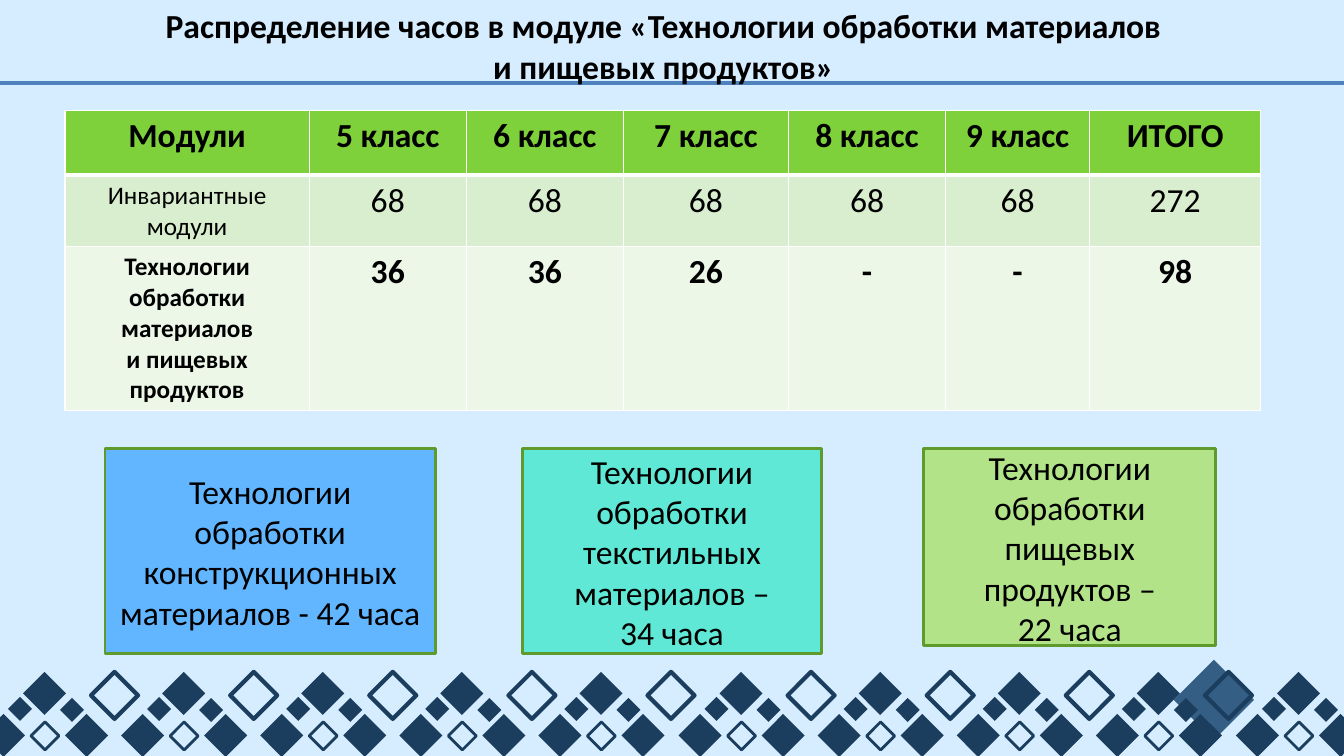
from lxml import etree
from pptx import Presentation
from pptx.dml.color import RGBColor
from pptx.enum.shapes import MSO_CONNECTOR, MSO_SHAPE
from pptx.enum.text import MSO_ANCHOR, MSO_AUTO_SIZE, PP_ALIGN
from pptx.oxml.ns import qn
from pptx.util import Pt

DIAMOND = MSO_SHAPE.DIAMOND
RECTANGLE = MSO_SHAPE.RECTANGLE
STRAIGHT = MSO_CONNECTOR.STRAIGHT
TOP, MIDDLE = MSO_ANCHOR.TOP, MSO_ANCHOR.MIDDLE
NO_AUTOFIT = MSO_AUTO_SIZE.NONE
CENTER = PP_ALIGN.CENTER

SCALE = 9080
FONT = "Calibri"
TITLE_ONLY = 5
SLIDE_WIDTH, SLIDE_HEIGHT = 1343, 755
COLORS = {
    "background": "D6ECFF",
    "text": "000000",
    "white": "FFFFFF",
    "rule": "4F81BD",
    "ornament": "1B3E5E",
    "accent": "345E84",
    "header": "7FD13B",
    "odd_row": "D8EECE",
    "even_row": "ECF7E8",
    "card_line": "5E9B2C",
    "blue": "61B6FF",
    "teal": "5FE8D6",
    "green": "B2E389",
}

TITLE = ["Распределение часов в модуле «Технологии обработки материалов",
         "и пищевых продуктов»"]
COLUMN_WIDTHS = [244, 157, 157, 165, 157, 144, 171]
ROW_HEIGHTS = [65, 71, 161]
ROW_FILLS = ["header", "odd_row", "even_row"]
ROWS = [
    ["Модули", "5 класс", "6 класс", "7 класс", "8 класс", "9 класс", "ИТОГО"],
    ["Инвариантные модули", "68", "68", "68", "68", "68", "272"],
    ["Технологии обработки материалов\nи пищевых продуктов",
     "36", "36", "26", "-", "-", "98"],
]
CARDS = [
    ((105, 448, 330, 205), "blue",
     ["Технологии обработки конструкционных материалов - 42 часа"]),
    ((522, 448, 299, 205), "teal",
     ["Технологии обработки текстильных материалов –", "34 часа"]),
    ((923, 448, 292, 197), "green",
     ["Технологии обработки пищевых продуктов –", "22 часа"]),
]
TILE_COUNT = 10
TILE_SPAN = 1253
SOLID_DIAMONDS = [(0, 54, 43), (41, 12, 43), (83, 54, 43),
                  (26, 37, 24), (78, 38, 24)]
SMALL_OUTLINE = (49, 62, 28)
LARGE_OUTLINE = (109, 12, 47)


def px(length):
    """Turn pixels into EMU."""
    return int(length * SCALE)


def color(name):
    """Return the named colour."""
    return RGBColor.from_string(COLORS[name])


def write(frame, lines, size=24, bold=False):
    """Write centred paragraphs into a text frame."""
    frame.text = "\n".join(lines)
    for paragraph in frame.paragraphs:
        paragraph.alignment = CENTER
        paragraph.font.name = FONT
        paragraph.font.size = Pt(size)
        paragraph.font.bold = bold
        paragraph.font.color.rgb = color("text")


def add_figure(slide, kind, box, fill=None, line=None, weight=2):
    """Add a preset shape with an optional fill and outline."""
    shape = slide.shapes.add_shape(kind, *map(px, box))
    shape.shadow.inherit = False
    if fill:
        shape.fill.solid()
        shape.fill.fore_color.rgb = color(fill)
    else:
        shape.fill.background()
    if line:
        shape.line.color.rgb = color(line)
        shape.line.width = Pt(weight)
    else:
        shape.line.fill.background()
    return shape


def add_ornament(slide, left, top):
    """Add the repeating band of diamonds along the bottom edge."""
    add_figure(slide, DIAMOND, (left + 1191, top, 80, 80), "accent")
    for index in range(TILE_COUNT):
        start = left + index * TILE_SPAN // (TILE_COUNT - 1)

        def place(diamond):
            """Return the box of a diamond in this tile."""
            x, y, side = diamond
            return start + x, top + y, side, side

        for diamond in SOLID_DIAMONDS:
            add_figure(slide, DIAMOND, place(diamond), "ornament")
        add_figure(slide, DIAMOND, place(SMALL_OUTLINE), line="ornament")
        if index < TILE_COUNT - 1:
            add_figure(slide, DIAMOND, place(LARGE_OUTLINE),
                       line="ornament", weight=3)


def add_rule(slide, top):
    """Add the full-width line under the title."""
    rule = slide.shapes.add_connector(
        STRAIGHT, 0, px(top), px(SLIDE_WIDTH), px(top))
    rule.line.color.rgb = color("rule")
    rule.line.width = Pt(3)
    etree.SubElement(rule._element.spPr, qn("a:effectLst"))


def place_title(slide, box):
    """Move the title placeholder in front of the line and fill it."""
    title = slide.shapes.title
    title.left, title.top, title.width, title.height = map(px, box)
    slide.shapes._spTree.append(title._element)
    frame = title.text_frame
    frame.word_wrap = True
    frame.auto_size = NO_AUTOFIT
    frame.vertical_anchor = TOP
    write(frame, TITLE, bold=True)


def set_borders(cell, top_weight, bottom_weight):
    """Give a table cell white borders."""
    properties = cell._tc.get_or_add_tcPr()
    weights = {"lnL": 1, "lnR": 1, "lnT": top_weight, "lnB": bottom_weight}
    for side, weight in weights.items():
        line = etree.SubElement(properties, qn(f"a:{side}"), w=str(Pt(weight)))
        fill = etree.SubElement(line, qn("a:solidFill"))
        etree.SubElement(fill, qn("a:srgbClr"), val=COLORS["white"])


def add_hours_table(slide, left, top):
    """Add the table of hours by class."""
    box = left, top, sum(COLUMN_WIDTHS), sum(ROW_HEIGHTS)
    table = slide.shapes.add_table(
        len(ROWS), len(COLUMN_WIDTHS), *map(px, box)).table
    for column, width in zip(table.columns, COLUMN_WIDTHS):
        column.width = px(width)
    for row_index, texts in enumerate(ROWS):
        table.rows[row_index].height = px(ROW_HEIGHTS[row_index])
        for column_index, text in enumerate(texts):
            cell = table.cell(row_index, column_index)
            set_borders(cell, 3 if row_index == 1 else 1,
                        3 if row_index == 0 else 1)
            cell.fill.solid()
            cell.fill.fore_color.rgb = color(ROW_FILLS[row_index])
            size = 18 if row_index and column_index == 0 else 24
            write(cell.text_frame, text.split("\n"), size, row_index != 1)


def add_card(slide, box, fill, lines):
    """Add a coloured box naming one part of the module."""
    card = add_figure(slide, RECTANGLE, box, fill, "card_line")
    card.text_frame.word_wrap = True
    card.text_frame.vertical_anchor = MIDDLE
    write(card.text_frame, lines)


def main():
    """Build and save the deck."""
    deck = Presentation()
    deck.slide_width, deck.slide_height = px(SLIDE_WIDTH), px(SLIDE_HEIGHT)
    slide = deck.slides.add_slide(deck.slide_layouts[TITLE_ONLY])
    slide.background.fill.solid()
    slide.background.fill.fore_color.rgb = color("background")
    add_ornament(slide, -18, 659)
    add_rule(slide, 83)
    place_title(slide, (18, 0, 1290, 92))
    add_hours_table(slide, 65, 110)
    for box, fill, lines in CARDS:
        add_card(slide, box, fill, lines)
    deck.save("out.pptx")


if __name__ == "__main__":
    main()
